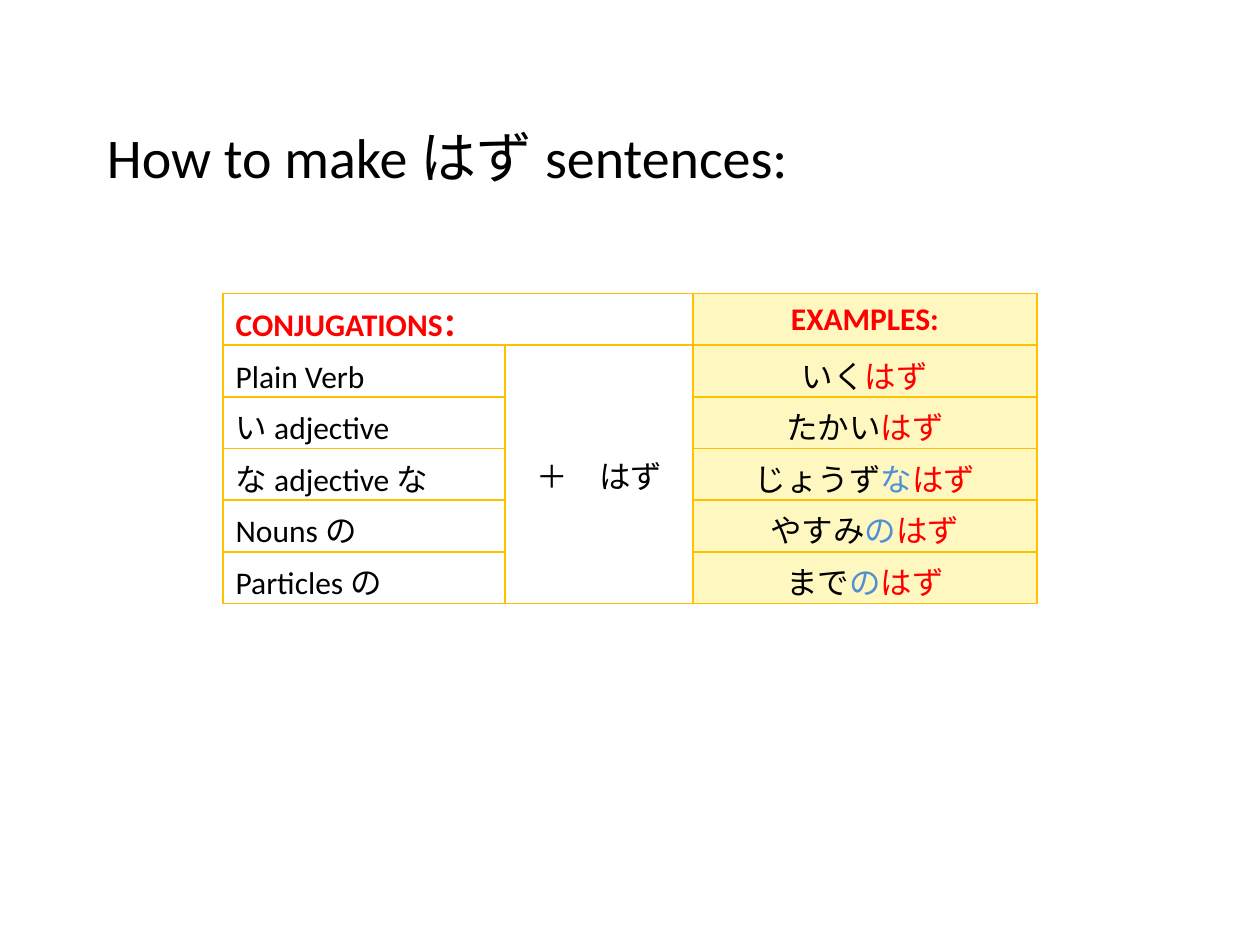
from lxml.etree import SubElement
from pptx import Presentation
from pptx.dml.color import RGBColor
from pptx.enum.text import MSO_ANCHOR, PP_ALIGN
from pptx.oxml.ns import qn
from pptx.util import Inches, Pt

COLORS = {"black": "000000", "red": "FF0000", "blue": "508FD4",
          "white": "FFFFFF", "cream": "FEF7BF", "gold": "FFC000"}
FONT = "Calibri"
COL_WIDTHS = [2.24, 1.49, 2.73]
ROW_HEIGHT = 0.41
# Form, then example as stem and linking particle
CONJUGATIONS = [
    ("Plain Verb \u3000", "いく", ""),
    ("い adjective", "たかい", ""),
    ("な adjective な", "じょうず", "な"),
    ("Nouns の", "やすみ", "の"),
    ("Particles の", "まで", "の"),
]


def rgb(name):
    return RGBColor.from_string(COLORS[name])


def write(tf, runs, size, bold=False, align=PP_ALIGN.LEFT):
    """Fill the first paragraph with (text, colour) runs."""
    p = tf.paragraphs[0]
    p.alignment = align
    p.font.name, p.font.size, p.font.bold = FONT, Pt(size), bold
    for text, color in runs:
        r = p.add_run()
        r.text = text
        r.font.color.rgb = rgb(color)


def set_borders(cell):
    tcPr = cell._tc.get_or_add_tcPr()
    for i, side in enumerate(("lnL", "lnR", "lnT", "lnB")):
        ln = tcPr.makeelement(qn(f"a:{side}"), {"w": str(Pt(1))})
        fill = SubElement(ln, qn("a:solidFill"))
        SubElement(fill, qn("a:srgbClr"), val=COLORS["gold"])
        tcPr.insert(i, ln)


def fill_cell(cell, runs, bold=False, centered=False):
    if centered:
        cell.vertical_anchor = MSO_ANCHOR.MIDDLE
    align = PP_ALIGN.CENTER if centered else PP_ALIGN.LEFT
    write(cell.text_frame, runs, 18, bold, align)


def add_title(s, left, top, width, height):
    tf = s.shapes.add_textbox(left, top, width, height).text_frame
    tf.word_wrap = True
    write(tf, [("How to make はず sentences:", "black")], 32)


def add_conjugation_table(s, left, top):
    n_rows = len(CONJUGATIONS) + 1
    table = s.shapes.add_table(n_rows, len(COL_WIDTHS), left, top,
                               Inches(sum(COL_WIDTHS)),
                               Inches(ROW_HEIGHT * n_rows)).table
    table.first_row = table.horz_banding = False
    for col, width in zip(table.columns, COL_WIDTHS):
        col.width = Inches(width)
    for row in table.rows:
        row.height = Inches(ROW_HEIGHT)
        for j, cell in enumerate(row.cells):
            cell.fill.solid()
            cell.fill.fore_color.rgb = rgb("cream" if j == 2 else "white")
            set_borders(cell)

    table.cell(0, 0).merge(table.cell(0, 1))
    table.cell(1, 1).merge(table.cell(n_rows - 1, 1))
    fill_cell(table.cell(0, 0), [("CONJUGATIONS：", "red")], bold=True)
    fill_cell(table.cell(0, 2), [("EXAMPLES:", "red")], bold=True, centered=True)
    fill_cell(table.cell(1, 1), [("＋\u3000はず", "black")], centered=True)
    for i, (form, stem, particle) in enumerate(CONJUGATIONS, start=1):
        fill_cell(table.cell(i, 0), [(form, "black")])
        example = [(stem, "black"), (particle, "blue"), ("はず", "red")]
        fill_cell(table.cell(i, 2), [r for r in example if r[0]], centered=True)


def main():
    prs = Presentation()
    prs.slide_width, prs.slide_height = Inches(10), Inches(7.5)
    s = prs.slides.add_slide(prs.slide_layouts[6])
    add_title(s, Inches(0.75), Inches(0.92), Inches(5.65), Inches(0.64))
    add_conjugation_table(s, Inches(1.77), Inches(2.33))
    prs.save("out.pptx")


if __name__ == "__main__":
    main()
